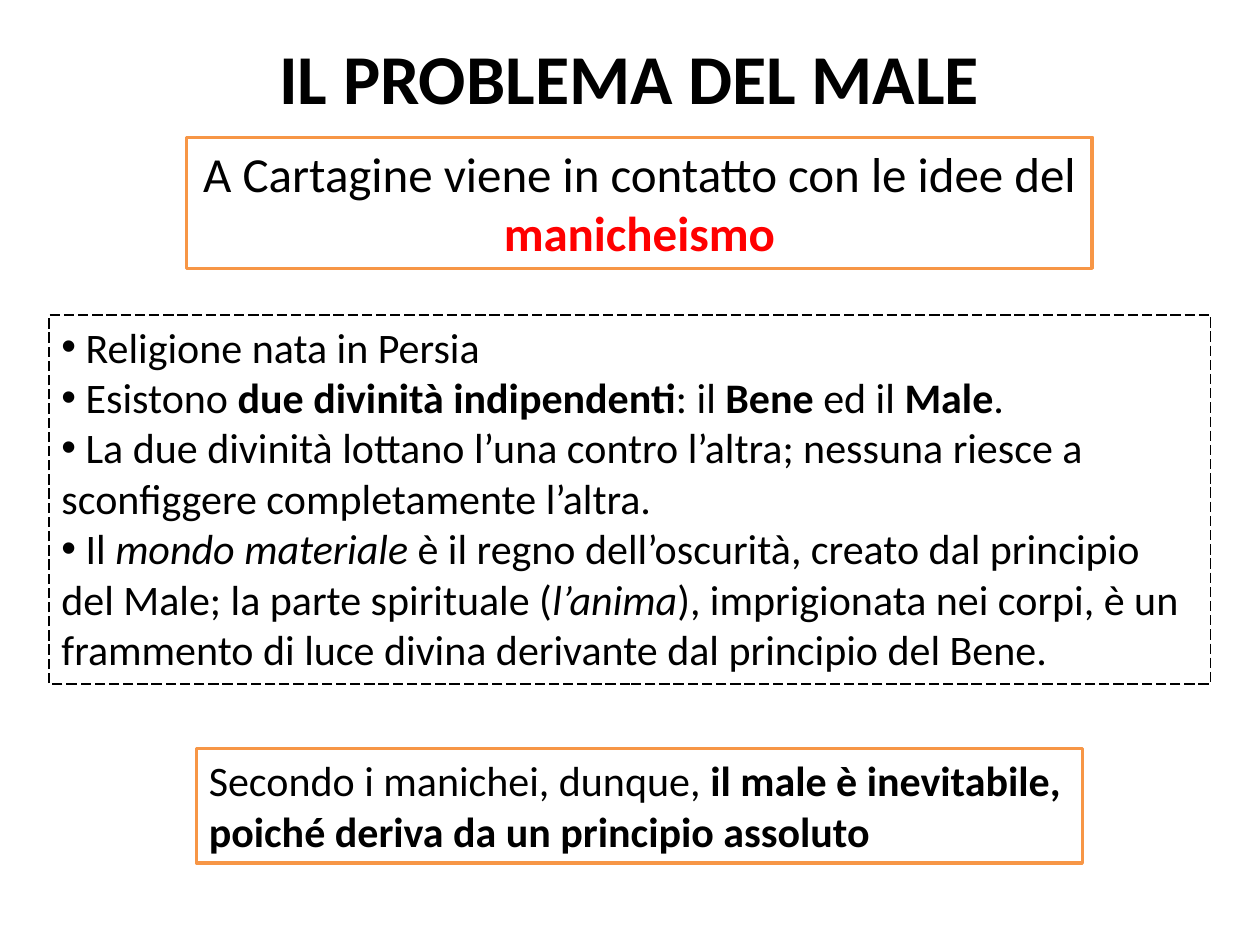
from lxml.etree import SubElement
from pptx import Presentation
from pptx.dml.color import RGBColor
from pptx.enum.dml import MSO_LINE_DASH_STYLE as Dash
from pptx.enum.shapes import MSO_SHAPE as Shape
from pptx.enum.text import MSO_ANCHOR as Anchor, MSO_AUTO_SIZE as AutoSize, PP_ALIGN as Align
from pptx.oxml.ns import qn
from pptx.util import Cm, Pt

COLORS = {"text": "000000", "paper": "FFFFFF", "accent": "F79646", "key": "FF0000"}
FONT = "Calibri"

TITLE = [[("IL PROBLEMA DEL MALE", "b")]]
CONTACT = [[("A Cartagine viene in contatto con le idee del ", ""),
            ("manicheismo", "b key")]]
DOCTRINE = [
    [(" Religione nata in Persia", "")],
    [(" Esistono ", ""), ("due divinità indipendenti", "b"), (": il ", ""),
     ("Bene", "b"), (" ed il ", ""), ("Male", "b"), (".", "")],
    [(" La due divinità lottano l’una contro l’altra; nessuna riesce a "
      "sconfiggere completamente l’altra.", "")],
    [(" Il ", ""), ("mondo materiale", "i"),
     (" è il regno dell’oscurità, creato dal principio del Male; la parte spirituale (", ""),
     ("l’anima", "i"),
     ("), imprigionata nei corpi, è un frammento di luce divina derivante dal "
      "principio del Bene.", "")],
]
CONCLUSION = [[("Secondo i manichei, dunque, ", ""),
               ("il male è inevitabile, poiché deriva da un principio assoluto", "b")]]


def rgb(name):
    return RGBColor.from_string(COLORS[name])


def add_bullet(paragraph):
    properties = paragraph._p.get_or_add_pPr()
    properties.set("marL", "0")
    properties.set("indent", "0")
    SubElement(properties, qn("a:buFont")).set("typeface", "Arial")
    SubElement(properties, qn("a:buChar")).set("char", "•")


def write(shape, paragraphs, size, align=Align.LEFT, bulleted=False):
    """Fill a shape with paragraphs of (text, style) runs; styles are b, i and key."""
    frame = shape.text_frame
    frame.word_wrap = True
    frame.auto_size = AutoSize.SHAPE_TO_FIT_TEXT
    frame.vertical_anchor = Anchor.TOP
    for index, runs in enumerate(paragraphs):
        paragraph = frame.add_paragraph() if index else frame.paragraphs[0]
        paragraph.alignment = align
        if bulleted:
            add_bullet(paragraph)
        for text, style in runs:
            marks = style.split()
            run = paragraph.add_run()
            run.text = text
            run.font.name = FONT
            run.font.size = Pt(size)
            run.font.bold = "b" in marks
            run.font.italic = "i" in marks
            run.font.color.rgb = rgb("key" if "key" in marks else "text")


def add_box(slide, bounds, line_color, line_width, fill=None, dash=None):
    box = slide.shapes.add_shape(Shape.RECTANGLE, *map(Cm, bounds))
    box.shadow.inherit = False
    if fill:
        box.fill.solid()
        box.fill.fore_color.rgb = rgb(fill)
    else:
        box.fill.background()
    box.line.color.rgb = rgb(line_color)
    box.line.width = Pt(line_width)
    if dash:
        box.line.dash_style = dash
    return box


def main():
    deck = Presentation()
    deck.slide_width, deck.slide_height = Cm(25.4), Cm(19.05)
    slide = deck.slides.add_slide(deck.slide_layouts[6])

    title = slide.shapes.add_textbox(Cm(4.95), Cm(0.58), Cm(15.47), Cm(1.96))
    write(title, TITLE, 40, Align.CENTER)

    contact = add_box(slide, (3.76, 2.77, 18.26, 2.64), "accent", 2, fill="paper")
    write(contact, CONTACT, 28, Align.CENTER)

    doctrine = add_box(slide, (0.99, 6.35, 23.42, 7.44), "text", 0.75, dash=Dash.LONG_DASH)
    write(doctrine, DOCTRINE, 24, bulleted=True)

    conclusion = add_box(slide, (3.96, 15.09, 17.86, 2.31), "accent", 2, fill="paper")
    write(conclusion, CONCLUSION, 24)

    deck.save("out.pptx")


if __name__ == "__main__":
    main()
